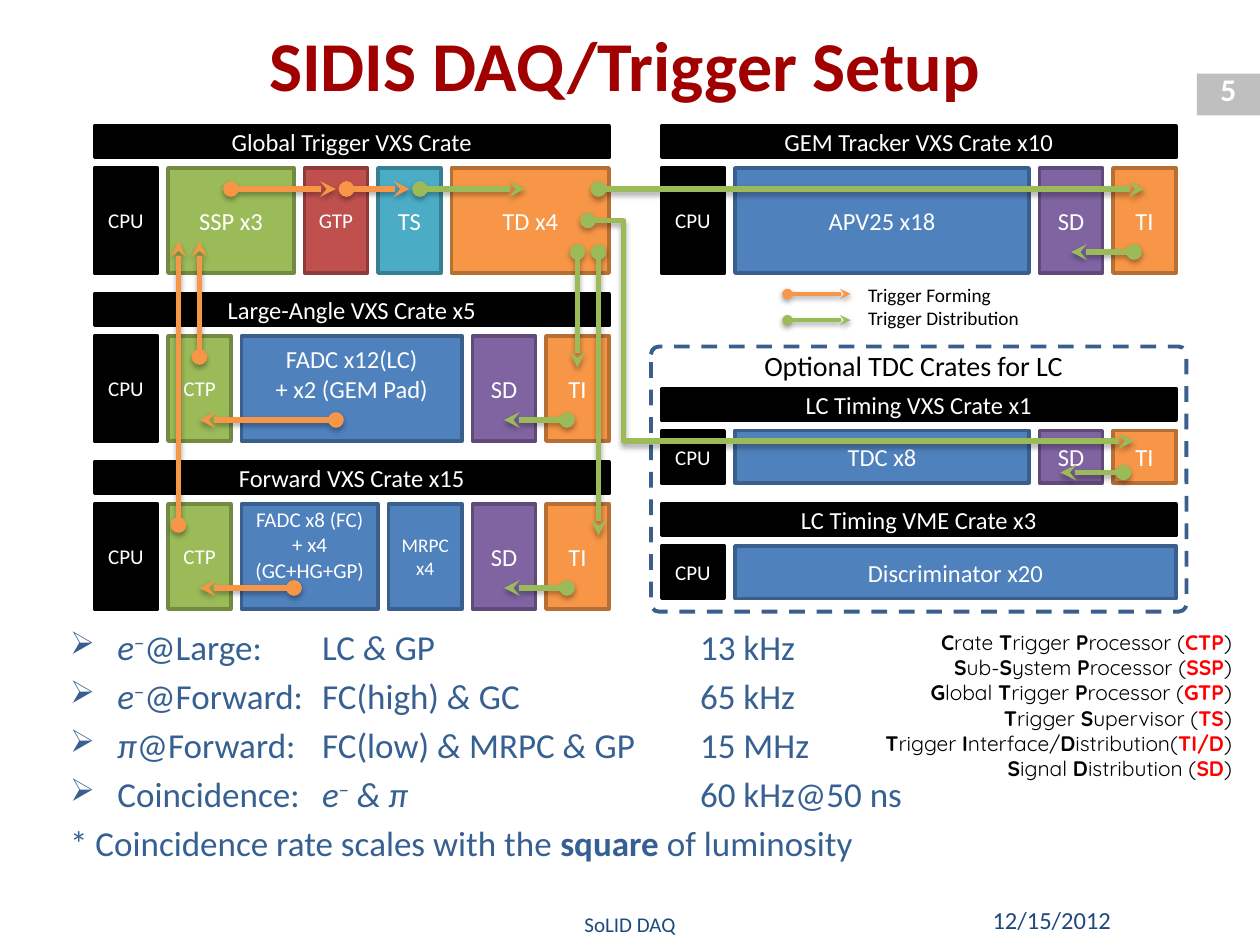
"""Build the SIDIS DAQ/Trigger Setup slide."""
from lxml import etree
from pptx import Presentation
from pptx.dml.color import RGBColor
from pptx.enum.dml import MSO_LINE
from pptx.enum.shapes import MSO_CONNECTOR as CONN, MSO_SHAPE as SHAPE
from pptx.enum.text import MSO_ANCHOR as ANCHOR, PP_ALIGN as ALIGN
from pptx.oxml.ns import qn
from pptx.util import Pt

PX = 9525
BLACK, WHITE = RGBColor(0, 0, 0), RGBColor(255, 255, 255)
GREY = RGBColor(0xBF, 0xBF, 0xBF)
DARK_RED, BRIGHT_RED = RGBColor(0xA0, 0, 0), RGBColor(255, 0, 0)
NAVY, STEEL = RGBColor(0x1F, 0x49, 0x7D), RGBColor(0x37, 0x60, 0x92)
BLUE, BLUE_EDGE = RGBColor(0x4F, 0x81, 0xBD), RGBColor(0x3A, 0x5F, 0x8C)
GREEN, GREEN_EDGE = RGBColor(0x9B, 0xBB, 0x59), RGBColor(0x73, 0x8A, 0x42)
RED, RED_EDGE = RGBColor(0xC0, 0x50, 0x4D), RGBColor(0x8E, 0x3B, 0x39)
TEAL, TEAL_EDGE = RGBColor(0x4B, 0xAC, 0xC6), RGBColor(0x37, 0x7F, 0x92)
ORANGE, ORANGE_EDGE = RGBColor(0xF7, 0x96, 0x46), RGBColor(0xB7, 0x6F, 0x34)
PURPLE, PURPLE_EDGE = RGBColor(0x80, 0x64, 0xA2), RGBColor(0x5F, 0x4A, 0x78)
EDGES = {BLACK: BLACK, BLUE: BLUE_EDGE, GREEN: GREEN_EDGE, RED: RED_EDGE,
         TEAL: TEAL_EDGE, ORANGE: ORANGE_EDGE, PURPLE: PURPLE_EDGE}


def write(sp, lines, size, color, align=ALIGN.CENTER, anchor=ANCHOR.MIDDLE, font="Calibri"):
    tf = sp.text_frame
    tf.word_wrap, tf.vertical_anchor = True, anchor
    for i, runs in enumerate(lines):
        p = tf.add_paragraph() if i else tf.paragraphs[0]
        p.alignment = align
        for text, fmt in runs:
            r = p.add_run()
            r.text = text
            r.font.color.rgb = fmt.get("color", color)
            for name, value in {"name": font, "size": Pt(size), "bold": False, **fmt}.items():
                if name == "baseline":
                    r.font._element.set(name, value)
                elif name != "color":
                    setattr(r.font, name, value)
    return tf


def box(kind, x, y, w, h, fill, edge=None, width=2):
    sp = s.shapes.add_shape(kind, x * PX, y * PX, w * PX, h * PX)
    sp.shadow.inherit = False
    if fill is None:
        sp.fill.background()
    else:
        sp.fill.solid()
        sp.fill.fore_color.rgb = fill
    if edge is None:
        sp.line.fill.background()
    else:
        sp.line.color.rgb, sp.line.width = edge, Pt(width)
    return sp


prs = Presentation()
prs.slide_width, prs.slide_height = 960 * PX, 720 * PX
s = prs.slides.add_slide(prs.slide_layouts[5])

title = s.shapes.title
title.left, title.top, title.width, title.height = 40 * PX, 8 * PX, 872 * PX, 80 * PX
write(title, [[("SIDIS DAQ/Trigger Setup", {"bold": True})]], 40, DARK_RED)

box(SHAPE.RECTANGLE, 912, 56, 48, 32, GREY)
LABELS = [
    ("5", 912, 49, 48, 38, 18, WHITE, ALIGN.CENTER, True),
    ("12/15/2012", 728, 682, 128, 38, 14, NAVY, ALIGN.RIGHT, False),
    ("SoLID DAQ", 232, 688, 496, 32, 12, NAVY, ALIGN.CENTER, False),
    ("Optional TDC Crates for LC", 560, 260, 272, 36, 16, BLACK, ALIGN.CENTER, False),
]
for text, x, y, w, h, size, color, align, bold in LABELS:
    sp = s.shapes.add_textbox(x * PX, y * PX, w * PX, h * PX)
    write(sp, [[(text, {"bold": bold})]], size, color, align)

GAP, BAR_W, BAR_H = 8, 392, 24
CPU, CTP = ("CPU", 48, 12, BLACK), ("CTP", 48, 12, GREEN)
SD, TI = ("SD", 48, 14, PURPLE), ("TI", 48, 14, ORANGE)
CRATES = [
    ("Global Trigger VXS Crate", 72, 96, 80,
     [CPU, ("SSP x3", 96, 14, GREEN), ("GTP", 48, 12, RED), ("TS", 48, 14, TEAL),
      ("TD x4", 120, 14, ORANGE)]),
    ("Large-Angle VXS Crate x5", 72, 224, 80,
     [CPU, CTP, ("FADC x12(LC)\n+ x2 (GEM Pad)", 168, 14, BLUE), SD, TI]),
    ("Forward VXS Crate x15", 72, 352, 80,
     [CPU, CTP, ("FADC x8 (FC)\n+ x4 (GC+HG+GP)", 104, 12, BLUE),
      ("MRPC\nx4", 56, 11, BLUE), SD, TI]),
    ("GEM Tracker VXS Crate x10", 504, 96, 80, [CPU, ("APV25 x18", 224, 14, BLUE), SD, TI]),
    ("LC Timing VXS Crate x1", 504, 296, 40, [CPU, ("TDC x8", 224, 14, BLUE), SD, TI]),
    ("LC Timing VME Crate x3", 504, 384, 40, [CPU, ("Discriminator x20", 336, 14, BLUE)]),
]
for name, x, y, h, modules in CRATES:
    bar = box(SHAPE.RECTANGLE, x, y, BAR_W, BAR_H, BLACK, BLACK)
    write(bar, [[(name, {})]], 14, WHITE)
    for label, w, size, color in modules:
        sp = box(SHAPE.RECTANGLE, x, y + BAR_H + GAP, w, h, color, EDGES[color])
        tf = write(sp, [[(line, {})] for line in label.split("\n")], size, WHITE)
        if label.startswith("FADC"):
            tf.margin_bottom = (2 * size - 1) * PX
        x += w + GAP

frame = box(SHAPE.ROUNDED_RECTANGLE, 496, 264, 408, 202, None, BLUE_EDGE, 2.25)
frame.adjustments[0] = 0.03
frame.line.dash_style = MSO_LINE.DASH

ARROWS = [
    (ORANGE, 3, 224, 448, 152, 448), (ORANGE, 3, 256, 320, 152, 320),
    (ORANGE, 3, 176, 144, 256, 144), (ORANGE, 3, 264, 144, 312, 144),
    (GREEN, 3, 320, 144, 400, 144), (GREEN, 3, 440, 192, 440, 280),
    (GREEN, 3, 456, 192, 456, 408), (GREEN, 3, 432, 320, 384, 320),
    (GREEN, 3, 432, 448, 384, 448), (GREEN, 3, 864, 192, 816, 192),
    (GREEN, 3, 456, 144, 872, 144), (GREEN, 3, 448, 168, 864, 336),
    (GREEN, 3, 856, 360, 808, 360), (ORANGE, 3, 136, 400, 136, 184),
    (ORANGE, 3, 152, 272, 152, 184),
    (ORANGE, 2, 600, 224, 648, 224), (GREEN, 2, 600, 244, 648, 244),
]
for color, width, x1, y1, x2, y2 in ARROWS:
    bent = x1 != x2 and y1 != y2
    arrow = s.shapes.add_connector(CONN.ELBOW if bent else CONN.STRAIGHT,
                                   x1 * PX, y1 * PX, x2 * PX, y2 * PX)
    arrow.line.color.rgb, arrow.line.width = color, Pt(width)
    sp_pr = arrow._element.spPr
    ln = sp_pr.find(qn("a:ln"))
    etree.SubElement(ln, qn("a:headEnd"), type="oval")
    etree.SubElement(ln, qn("a:tailEnd"), type="stealth")
    effects = etree.SubElement(sp_pr, qn("a:effectLst"))
    shadow = etree.SubElement(effects, qn("a:outerShdw"), blurRad="40000",
                              dist="23000" if width == 3 else "20000", dir="5400000", rotWithShape="0")
    shade = etree.SubElement(shadow, qn("a:srgbClr"), val="000000")
    etree.SubElement(shade, qn("a:alpha"), val="35000" if width == 3 else "38000")
    if bent:
        guides = sp_pr.find(qn("a:prstGeom")).get_or_add_avLst()
        etree.SubElement(guides, qn("a:gd"), name="adj1", fmla="val 6500")

legend = s.shapes.add_textbox(652 * PX, 211 * PX, 136 * PX, 45 * PX)
write(legend, [[("Trigger Forming", {})], [("Trigger Distribution", {})]],
      11, BLACK, ALIGN.LEFT, ANCHOR.TOP).word_wrap = False

ITALIC, BOLD, SUPER = {"italic": True}, {"bold": True}, {"baseline": "30000"}
AND, ELECTRON = ("&", ITALIC), [("e", ITALIC), ("−", SUPER)]
RATES = [
    [*ELECTRON, ("@Large:\tLC ", {}), AND, (" GP\t13 kHz", {})],
    [*ELECTRON, ("@Forward:\tFC(high) ", {}), AND, (" GC\t65 kHz", {})],
    [("π", ITALIC), ("@Forward:\tFC(low) ", {}), AND, (" MRPC ", {}), AND, (" GP\t15 MHz", {})],
    [("Coincidence:\t", {}), *ELECTRON, (" & π", ITALIC), ("\t60 kHz@50 ns", {})],
    [("* Coincidence rate scales with the ", {}), ("square", BOLD), (" of luminosity", {})],
]
rates = s.shapes.add_textbox(44 * PX, 472 * PX, 776 * PX, 200 * PX)
tf = write(rates, RATES, 20, STEEL, ALIGN.LEFT, ANCHOR.TOP)
for i, p in enumerate(tf.paragraphs):
    if i:
        p.space_before = Pt(4)
    p_pr = p._p.get_or_add_pPr()
    p_pr.set("marL", str(36 * PX))
    p_pr.set("indent", str(-36 * PX))
    if i < 4:
        etree.SubElement(p_pr, qn("a:buSzPct"), val="90000")
        etree.SubElement(p_pr, qn("a:buChar"), char="➢")
        tabs = etree.SubElement(p_pr, qn("a:tabLst"))
        for stop in (192, 480):
            etree.SubElement(tabs, qn("a:tab"), pos=str(stop * PX), algn="l")

GLOSSARY = [
    ("*C*rate *T*rigger *P*rocessor (", "CTP"),
    ("*S*ub-*S*ystem *P*rocessor (", "SSP"),
    ("*G*lobal *T*rigger *P*rocessor (", "GTP"),
    ("*T*rigger *S*upervisor (", "TS"),
    ("*T*rigger *I*nterface/*D*istribution(", "TI/D"),
    ("*S*ignal *D*istribution (", "SD"),
]
lines = []
for words, short in GLOSSARY:
    runs = [(part, {"bold": i % 2 == 1}) for i, part in enumerate(words.split("*")) if part]
    lines.append(runs + [(short, {"bold": True, "color": BRIGHT_RED}), (")", {})])
glossary = s.shapes.add_textbox(600 * PX, 475 * PX, 348 * PX, 126 * PX)
write(glossary, lines, 12, BLACK, ALIGN.RIGHT, ANCHOR.TOP, "Quicksand")

prs.save("out.pptx")
